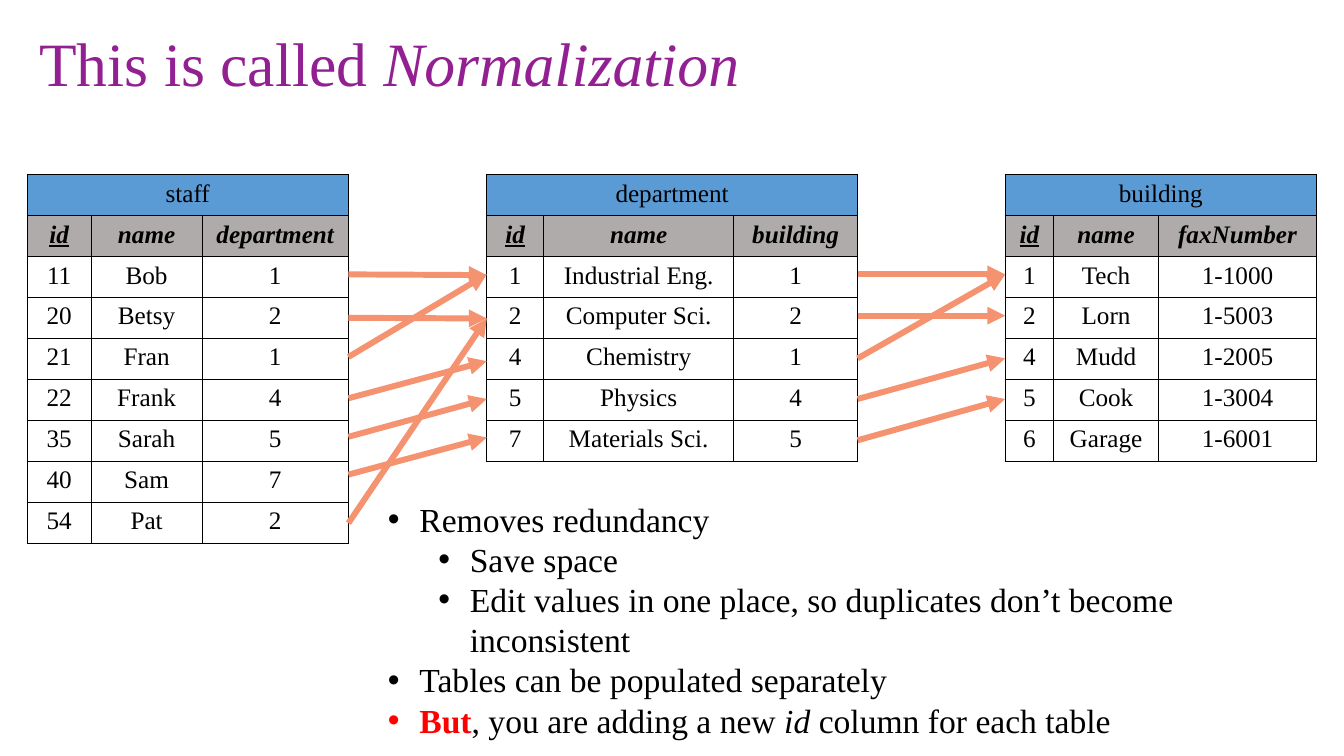
from dataclasses import dataclass
from typing import Any, NamedTuple

from lxml import etree
from pptx import Presentation
from pptx import util as u
from pptx.dml.color import RGBColor
from pptx.enum import shapes, text
from pptx.oxml import ns


@dataclass(frozen=True)
class Theme:
    font: str = "Times New Roman"
    title_size: float = 44
    body_size: float = 24
    cell_size: float = 18
    title: str = "932092"
    ink: str = "000000"
    warning: str = "FF0000"
    name_fill: str = "5B9BD5"
    header_fill: str = "AFABAB"
    arrow: str = "F59370"
    arrow_width: float = 4.25
    border_width: float = 1


THEME = Theme()
TABLE_TOP = 124.7
ROW_HEIGHT = 29.28


class Run(NamedTuple):
    words: str
    bold: bool = False
    italic: bool = False
    underline: bool = False
    color: str = THEME.ink


class Bullet(NamedTuple):
    level: int
    runs: list[Run]


@dataclass(frozen=True)
class Relation:
    name: str
    left: float
    widths: list[float]
    columns: list[str]
    rows: list[list[str]]

    @property
    def right(self) -> float:
        return self.left + sum(self.widths)


class ArrowGroup(NamedTuple):
    source: Relation
    target: Relation
    heights: list[tuple[float, float]]


STAFF = Relation(
    "staff", 19.4, [45.7, 79.3, 104.5], ["id", "name", "department"],
    [["11", "Bob", "1"], ["20", "Betsy", "2"], ["21", "Fran", "1"],
     ["22", "Frank", "4"], ["35", "Sarah", "5"], ["40", "Sam", "7"],
     ["54", "Pat", "2"]],
)
DEPARTMENT = Relation(
    "department", 347.7, [40.7, 135.7, 88.5], ["id", "name", "building"],
    [["1", "Industrial Eng.", "1"], ["2", "Computer Sci.", "2"],
     ["4", "Chemistry", "1"], ["5", "Physics", "4"],
     ["7", "Materials Sci.", "5"]],
)
BUILDING = Relation(
    "building", 718, [34.6, 75, 112.9], ["id", "name", "faxNumber"],
    [["1", "Tech", "1-1000"], ["2", "Lorn", "1-5003"],
     ["4", "Mudd", "1-2005"], ["5", "Cook", "1-3004"],
     ["6", "Garage", "1-6001"]],
)
ARROW_GROUPS = [
    ArrowGroup(STAFF, DEPARTMENT, [
        (196, 196.5), (227, 227.5), (255, 196), (284.5, 258),
        (312, 285), (339, 312.5), (373.7, 227.5)]),
    ArrowGroup(DEPARTMENT, BUILDING, [
        (196, 196), (225.5, 225.5), (256, 196), (285, 256), (314.5, 285)]),
]
TITLE = [Run("This is called ", color=THEME.title),
         Run("Normalization", italic=True, color=THEME.title)]
BULLETS = [
    Bullet(0, [Run("Removes redundancy")]),
    Bullet(1, [Run("Save space")]),
    Bullet(1, [Run("Edit values in one place, so duplicates don’t become inconsistent")]),
    Bullet(0, [Run("Tables can be populated separately")]),
    Bullet(0, [Run("But", bold=True, color=THEME.warning),
               Run(", you are adding a new "), Run("id ", italic=True),
               Run("column for each table")]),
]


def add_runs(paragraph: Any, runs: list[Run], size: float) -> None:
    for item in runs:
        run = paragraph.add_run()
        run.text = item.words
        run.font.name = THEME.font
        run.font.size = u.Pt(size)
        run.font.bold = item.bold
        run.font.italic = item.italic
        run.font.underline = item.underline
        run.font.color.rgb = RGBColor.from_string(item.color)


def add_borders(cell_element: Any) -> None:
    properties = cell_element.get_or_add_tcPr()
    for side in ("lnL", "lnR", "lnT", "lnB"):
        line = etree.SubElement(properties, ns.qn(f"a:{side}"),
                                w=str(u.Pt(THEME.border_width)))
        fill = etree.SubElement(line, ns.qn("a:solidFill"))
        etree.SubElement(fill, ns.qn("a:srgbClr"), val=THEME.ink)


def fill_cell(cell: Any, run: Run, color: str | None) -> None:
    if color:
        cell.fill.solid()
        cell.fill.fore_color.rgb = RGBColor.from_string(color)
    else:
        cell.fill.background()
    paragraph = cell.text_frame.paragraphs[0]
    paragraph.alignment = text.PP_ALIGN.CENTER
    add_runs(paragraph, [run], THEME.cell_size)


def add_relation(slide: Any, relation: Relation) -> None:
    """Draw a table with a name row, a column row and the data rows."""
    row_count = len(relation.rows) + 2
    frame = slide.shapes.add_table(
        row_count, len(relation.columns), u.Pt(relation.left), u.Pt(TABLE_TOP),
        u.Pt(sum(relation.widths)), u.Pt(ROW_HEIGHT * row_count))
    table = frame.table
    table.first_row = table.horz_banding = False
    for column, width in zip(table.columns, relation.widths):
        column.width = u.Pt(width)
    for row in table.rows:
        row.height = u.Pt(ROW_HEIGHT)
    for cell_element in frame.element.iter(ns.qn("a:tc")):
        add_borders(cell_element)
    table.cell(0, 0).merge(table.cell(0, len(relation.columns) - 1))
    fill_cell(table.cell(0, 0), Run(relation.name), THEME.name_fill)
    for index, name in enumerate(relation.columns):
        header = Run(name, bold=True, italic=True, underline=name == "id")
        fill_cell(table.cell(1, index), header, THEME.header_fill)
    for row_index, values in enumerate(relation.rows, start=2):
        for index, value in enumerate(values):
            fill_cell(table.cell(row_index, index), Run(value), None)


def add_arrow(slide: Any, left: float, start: float, right: float, end: float) -> None:
    arrow = slide.shapes.add_connector(
        shapes.MSO_CONNECTOR.STRAIGHT,
        u.Pt(left), u.Pt(start), u.Pt(right), u.Pt(end))
    arrow.line.color.rgb = RGBColor.from_string(THEME.arrow)
    arrow.line.width = u.Pt(THEME.arrow_width)
    line = arrow.element.spPr.find(ns.qn("a:ln"))
    etree.SubElement(line, ns.qn("a:tailEnd"), type="triangle")
    etree.SubElement(arrow.element.spPr, ns.qn("a:effectLst"))


def add_text_box(slide: Any, left: float, top: float, width: float, height: float) -> Any:
    frame = slide.shapes.add_textbox(
        u.Pt(left), u.Pt(top), u.Pt(width), u.Pt(height)).text_frame
    frame.word_wrap = True
    return frame


def add_title(slide: Any) -> None:
    frame = add_text_box(slide, 21, 12.2, 916.6, 70)
    frame.vertical_anchor = text.MSO_ANCHOR.MIDDLE
    frame.paragraphs[0].line_spacing = 0.9
    add_runs(frame.paragraphs[0], TITLE, THEME.title_size)


def add_bullets(slide: Any) -> None:
    frame = add_text_box(slide, 270, 352.8, 681, 152.6)
    frame.auto_size = text.MSO_AUTO_SIZE.SHAPE_TO_FIT_TEXT
    for index, bullet in enumerate(BULLETS):
        paragraph = frame.add_paragraph() if index else frame.paragraphs[0]
        paragraph.level = bullet.level
        paragraph.line_spacing = u.Pt(28.7)
        properties = paragraph._p.get_or_add_pPr()
        properties.set("marL", str(u.Pt(22.5 + 36 * bullet.level)))
        properties.set("indent", str(u.Pt(-22.5)))
        etree.SubElement(properties, ns.qn("a:buFont"), typeface="Arial")
        etree.SubElement(properties, ns.qn("a:buChar"), char="•")
        add_runs(paragraph, bullet.runs, THEME.body_size)


def main() -> None:
    presentation = Presentation()
    presentation.slide_width, presentation.slide_height = u.Pt(960), u.Pt(540)
    slide = presentation.slides.add_slide(presentation.slide_layouts[6])
    add_title(slide)
    for relation in (STAFF, DEPARTMENT, BUILDING):
        add_relation(slide, relation)
    for source, target, heights in ARROW_GROUPS:
        for start, end in heights:
            add_arrow(slide, source.right, start, target.left, end)
    add_bullets(slide)
    presentation.save("out.pptx")


if __name__ == "__main__":
    main()
